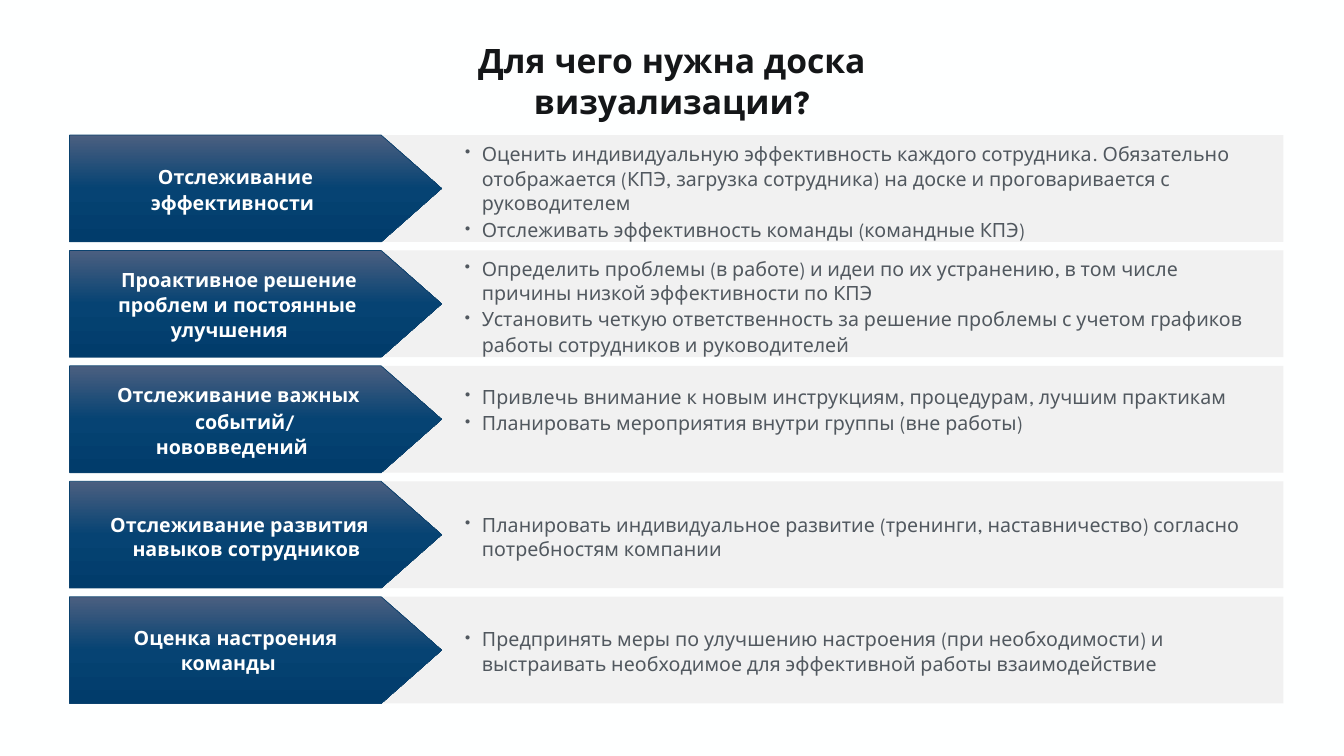
import copy
from dataclasses import dataclass
from typing import Optional

import lxml.etree
import pptx
import pptx.dml.color
import pptx.enum.shapes
import pptx.enum.text
import pptx.oxml.ns
import pptx.util
from pptx.util import Inches

COLORS = {
    "background": "FEFFFF",
    "bar": "F1F1F1",
    "outline": "0B426E",
    "label": "FFFFFF",
    "body": "51585F",
    "title": "141618",
}
ARROW_GRADIENT = [(0, "4B5F80"), (0.5, "064373"), (1, "013C6B")]
FONT = "League Spartan"
FIRST_TOP, ROW_PITCH, ROW_HEIGHT = 1.34, 1.145, 1.06
ARROW_WIDTH, ARROW_POINT = 3.69, 0.6


@dataclass
class Line:
    text: str
    margin: float = 0.01
    indent: float = 0
    spacing: Optional[float | pptx.util.Pt] = None
    before: float = 0
    bullet: bool = False


@dataclass
class TextBox:
    left: float
    top: float
    width: float
    height: float
    lines: list[Line]


@dataclass
class Row:
    labels: list[TextBox]
    body: TextBox


def bullet(text: str, before: float = 0, spacing: float | pptx.util.Pt = 1.06) -> Line:
    return Line(text, 0.2, -0.19, spacing, before, True)


ROWS = [
    Row(
        [TextBox(1.29, 1.64, 2.02, 0.49, [
            Line("Отслеживание", margin=0.07), Line("эффективности", before=1.1)])],
        TextBox(4.58, 1.39, 7.92, 1, [
            bullet("Оценить индивидуальную эффективность каждого сотрудника. Обязательно отображается "
                   "(КПЭ, загрузка сотрудника) на доске и проговаривается с руководителем"),
            bullet("Отслеживать эффективность команды (командные КПЭ)", 1.1)]),
    ),
    Row(
        [TextBox(0.87, 2.66, 2.96, 0.49, [
            Line("Проактивное решение", margin=0.04), Line("проблем и постоянные", before=1.1)]),
         TextBox(1.54, 3.15, 1.46, 0.24, [Line("улучшения")])],
        TextBox(4.58, 2.53, 8.03, 1.02, [
            bullet("Определить проблемы (в работе) и идеи по их устранению, в том числе "
                   "причины низкой эффективности по КПЭ"),
            bullet("Установить четкую ответственность за решение проблемы с учетом графиков "
                   "работы сотрудников и руководителей", 0.7, pptx.util.Pt(17.9))]),
    ),
    Row(
        [TextBox(0.86, 3.8, 3, 0.24, [Line("Отслеживание важных")]),
         TextBox(1.37, 4.05, 1.85, 0.5, [Line("событий/ нововведений", indent=0.26, spacing=1.06)])],
        TextBox(4.58, 3.8, 7.65, 0.75, [
            bullet("Привлечь внимание к новым инструкциям, процедурам, лучшим практикам"),
            bullet("Планировать мероприятия внутри группы (вне работы)", 0.9)]),
    ),
    Row(
        [TextBox(0.8, 5.07, 3.14, 0.5, [
            Line("Отслеживание развития навыков сотрудников", 0.15, -0.14, 1.06)])],
        TextBox(4.58, 5.07, 8.08, 0.5, [
            bullet("Планировать индивидуальное развитие (тренинги, наставничество) согласно "
                   "потребностям компании")]),
    ),
    Row(
        [TextBox(1.07, 6.21, 2.52, 0.24, [Line("Оценка настроения")]),
         TextBox(1.67, 6.46, 1.18, 0.24, [Line("команды")])],
        TextBox(4.58, 6.21, 8.08, 0.5, [
            bullet("Предпринять меры по улучшению настроения (при необходимости) и "
                   "выстраивать необходимое для эффективной работы взаимодействие")]),
    ),
]
TITLE = TextBox(3.33, 0.35, 6.67, 0.5, [Line("Для чего нужна доска визуализации?", margin=0)])


def rgb(value: str) -> pptx.dml.color.RGBColor:
    return pptx.dml.color.RGBColor.from_string(value)


def add_text(slide: pptx.slide.Slide, box: TextBox, color: str, size: float = 14,
             bold: bool = True, inset: bool = False) -> None:
    shape = slide.shapes.add_textbox(
        Inches(box.left), Inches(box.top), Inches(box.width), Inches(box.height))
    frame = shape.text_frame
    frame.word_wrap = True
    frame.auto_size = pptx.enum.text.MSO_AUTO_SIZE.SHAPE_TO_FIT_TEXT
    if not inset:
        frame.margin_left = frame.margin_right = frame.margin_top = frame.margin_bottom = 0
    for index, line in enumerate(box.lines):
        paragraph = frame.add_paragraph() if index else frame.paragraphs[0]
        properties = paragraph._p.get_or_add_pPr()
        properties.set("marL", str(Inches(line.margin)))
        properties.set("indent", str(Inches(line.indent)))
        if line.bullet:
            bullet_font = lxml.etree.SubElement(properties, pptx.oxml.ns.qn("a:buFont"))
            bullet_font.set("typeface", FONT)
            mark = lxml.etree.SubElement(properties, pptx.oxml.ns.qn("a:buChar"))
            mark.set("char", "•")
        else:
            paragraph.alignment = pptx.enum.text.PP_ALIGN.CENTER
        if line.spacing:
            paragraph.line_spacing = line.spacing
        if line.before:
            paragraph.space_before = pptx.util.Pt(line.before)
        run = paragraph.add_run()
        run.text = line.text
        run.font.name = FONT
        run.font.size = pptx.util.Pt(size)
        run.font.bold = bold
        run.font.color.rgb = rgb(COLORS[color])


def add_bar(slide: pptx.slide.Slide, top: float) -> None:
    bar = slide.shapes.add_shape(
        pptx.enum.shapes.MSO_SHAPE.RECTANGLE,
        Inches(1.2), Inches(top), Inches(11.53), Inches(ROW_HEIGHT))
    bar.shadow.inherit = False
    bar.fill.solid()
    bar.fill.fore_color.rgb = rgb(COLORS["bar"])
    bar.line.fill.background()


def add_arrow(slide: pptx.slide.Slide, top: float) -> None:
    arrow = slide.shapes.add_shape(
        pptx.enum.shapes.MSO_SHAPE.PENTAGON,
        Inches(0.69), Inches(top), Inches(ARROW_WIDTH), Inches(ROW_HEIGHT))
    arrow.adjustments[0] = ARROW_POINT / ROW_HEIGHT
    arrow.shadow.inherit = False
    arrow.line.color.rgb = rgb(COLORS["outline"])
    arrow.line.width = pptx.util.Pt(0.5)
    arrow.fill.gradient()
    arrow.fill.gradient_angle = 270
    # The default gradient has two stops; a third is needed
    stop_list = arrow._element.spPr.find(".//" + pptx.oxml.ns.qn("a:gsLst"))
    stop_list.append(copy.deepcopy(stop_list[-1]))
    for stop, (position, color) in zip(arrow.fill.gradient_stops, ARROW_GRADIENT):
        stop.position = position
        stop.color.rgb = rgb(color)


def main() -> None:
    presentation = pptx.Presentation()
    presentation.slide_width = Inches(13.33)
    presentation.slide_height = Inches(7.5)
    slide = presentation.slides.add_slide(presentation.slide_layouts[6])
    slide.background.fill.solid()
    slide.background.fill.fore_color.rgb = rgb(COLORS["background"])

    # Rows: grey bar, arrow, label and bullets
    for index, row in enumerate(ROWS):
        top = FIRST_TOP + index * ROW_PITCH
        add_bar(slide, top)
        add_arrow(slide, top)
        add_text(slide, row.body, "body", bold=False)
        for label in row.labels:
            add_text(slide, label, "label")

    # Title
    add_text(slide, TITLE, "title", size=24, inset=True)
    presentation.save("out.pptx")


if __name__ == "__main__":
    main()
